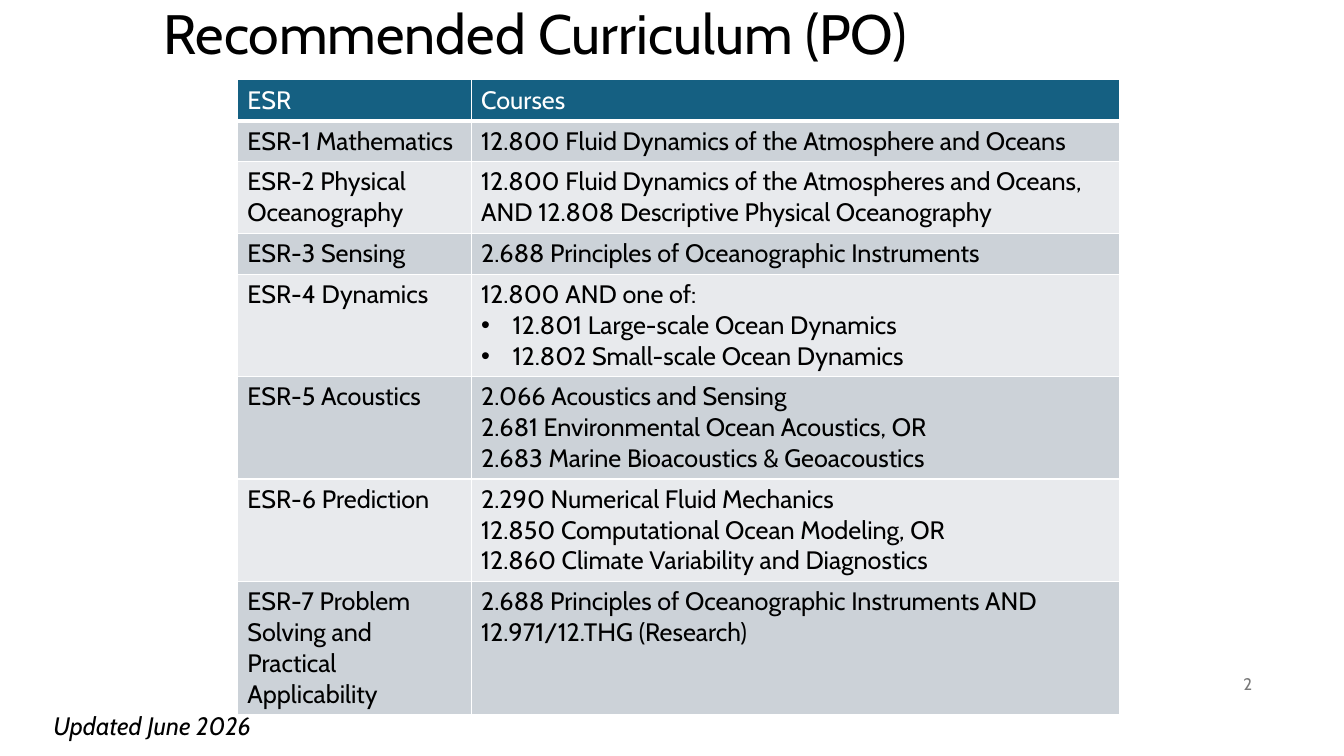
from lxml import etree
from pptx import Presentation
from pptx.dml.color import RGBColor
from pptx.enum.text import MSO_ANCHOR as Anchor, MSO_AUTO_SIZE as AutoSize, PP_ALIGN as Align
from pptx.oxml.ns import qn
from pptx.util import Pt

FONT = "Cabin"
BLACK = RGBColor(0x00, 0x00, 0x00)
WHITE = RGBColor(0xFF, 0xFF, 0xFF)
GREY = RGBColor(0x79, 0x79, 0x79)
HEADER_BLUE = RGBColor(0x15, 0x60, 0x82)
BAND_DARK = RGBColor(0xCC, 0xD2, 0xD8)
BAND_LIGHT = RGBColor(0xE8, 0xEA, 0xED)

BULLET = "•"
BULLET_INDENT = Pt(22.5)
COLUMN_WIDTHS = (167, 463)
ONE_LINE_ROW, EXTRA_LINE = 29.2, 22

# Requirement, its course paragraphs, and the lines the row takes
CURRICULUM = [
    ("ESR", ["Courses"], 1),
    ("ESR-1 Mathematics", ["12.800 Fluid Dynamics of the Atmosphere and Oceans"], 1),
    ("ESR-2 Physical Oceanography",
     ["12.800 Fluid Dynamics of the Atmospheres and Oceans, "
      "AND 12.808 Descriptive Physical Oceanography"], 2),
    ("ESR-3 Sensing", ["2.688 Principles of Oceanographic Instruments"], 1),
    ("ESR-4 Dynamics",
     ["12.800 AND one of:",
      BULLET + "12.801 Large-scale Ocean Dynamics",
      BULLET + "12.802 Small-scale Ocean Dynamics"], 3),
    ("ESR-5 Acoustics",
     ["2.066 Acoustics and Sensing",
      "2.681 Environmental Ocean Acoustics, OR",
      "2.683 Marine Bioacoustics & Geoacoustics"], 3),
    ("ESR-6 Prediction",
     ["2.290 Numerical Fluid Mechanics",
      "12.850 Computational Ocean Modeling, OR",
      "12.860 Climate Variability and Diagnostics"], 3),
    ("ESR-7 Problem Solving and Practical Applicability",
     ["2.688 Principles of Oceanographic Instruments AND",
      "12.971/12.THG (Research)"], 4),
]


def style_font(font, size, color, italic=False):
    font.name = FONT
    font.size = Pt(size)
    font.bold = False
    font.italic = italic
    font.color.rgb = color


def add_run(paragraph, text, size, color, italic=False):
    run = paragraph.add_run()
    run.text = text
    style_font(run.font, size, color, italic)


def add_bullet(paragraph):
    properties = paragraph._p.get_or_add_pPr()
    properties.set("marL", str(BULLET_INDENT))
    properties.set("indent", str(-BULLET_INDENT))
    etree.SubElement(properties, qn("a:buFont"), typeface="Arial")
    etree.SubElement(properties, qn("a:buChar"), char=BULLET)


def add_borders(cell, bottom_width):
    properties = cell._tc.get_or_add_tcPr()
    for side, width in (("L", 1), ("R", 1), ("T", 1), ("B", bottom_width)):
        line = etree.SubElement(properties, qn(f"a:ln{side}"), w=str(Pt(width)))
        fill = etree.SubElement(line, qn("a:solidFill"))
        etree.SubElement(fill, qn("a:srgbClr"), val=str(WHITE))


def fill_cell(cell, paragraphs, fill, color, bottom_width):
    add_borders(cell, bottom_width)
    cell.fill.solid()
    cell.fill.fore_color.rgb = fill
    for index, text in enumerate(paragraphs):
        frame = cell.text_frame
        paragraph = frame.add_paragraph() if index else frame.paragraphs[0]
        if text.startswith(BULLET):
            add_bullet(paragraph)
        add_run(paragraph, text.removeprefix(BULLET), 18, color)


def add_title(slide, text):
    title = slide.shapes.title
    title.left, title.top, title.width, title.height = Pt(109.5), Pt(2), Pt(720), Pt(48)
    frame = title.text_frame
    frame.auto_size = AutoSize.NONE
    frame.vertical_anchor = Anchor.MIDDLE
    paragraph = frame.paragraphs[0]
    paragraph.alignment = Align.LEFT
    paragraph.line_spacing = 0.9
    add_run(paragraph, text, 39.6, BLACK)


def add_curriculum(slide):
    heights = [ONE_LINE_ROW + EXTRA_LINE * (lines - 1) for _, _, lines in CURRICULUM]
    table = slide.shapes.add_table(
        len(CURRICULUM), len(COLUMN_WIDTHS), Pt(169.5), Pt(57),
        Pt(sum(COLUMN_WIDTHS)), Pt(sum(heights))).table
    for column, width in zip(table.columns, COLUMN_WIDTHS):
        column.width = Pt(width)
    for index, (requirement, courses, _) in enumerate(CURRICULUM):
        table.rows[index].height = Pt(heights[index])
        if index == 0:
            look = HEADER_BLUE, WHITE, 3
        else:
            look = (BAND_DARK if index % 2 else BAND_LIGHT), BLACK, 1
        fill_cell(table.cell(index, 0), [requirement], *look)
        fill_cell(table.cell(index, 1), courses, *look)


def add_slide_number(slide, number):
    frame = slide.shapes.add_textbox(Pt(685.5), Pt(474), Pt(216), Pt(29)).text_frame
    frame.word_wrap = True
    frame.vertical_anchor = Anchor.MIDDLE
    paragraph = frame.paragraphs[0]
    paragraph.alignment = Align.RIGHT
    add_run(paragraph, number, 12, GREY)


def add_update_note(slide, text):
    frame = slide.shapes.add_textbox(Pt(31), Pt(503.5), Pt(164), Pt(29)).text_frame
    frame.word_wrap = False
    frame.auto_size = AutoSize.SHAPE_TO_FIT_TEXT
    add_run(frame.paragraphs[0], text, 18, BLACK, italic=True)


def main():
    deck = Presentation()
    deck.slide_width, deck.slide_height = Pt(960), Pt(540)
    slide = deck.slides.add_slide(deck.slide_layouts[5])
    add_title(slide, "Recommended Curriculum (PO)")
    add_slide_number(slide, "2")
    add_curriculum(slide)
    add_update_note(slide, "Updated June 2026")
    deck.save("out.pptx")


if __name__ == "__main__":
    main()
